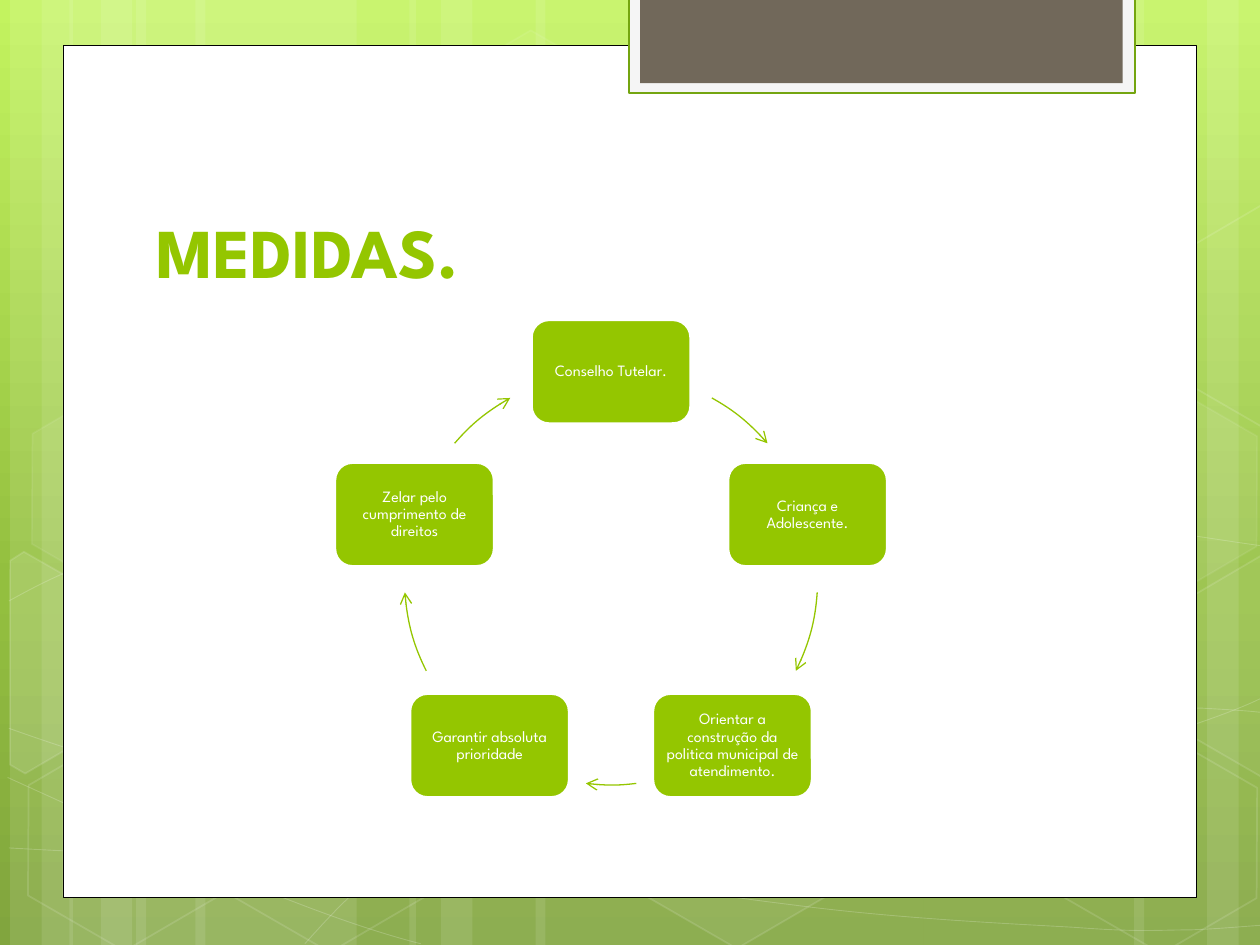
import math
from lxml import etree
from pptx import Presentation, util as u
from pptx.dml.color import RGBColor
from pptx.enum import shapes as sh, text as tx
from pptx.oxml.ns import qn

PX = 9144  # 100 px to the inch
FONT = "League Spartan"
WHITE = RGBColor(0xFF, 0xFF, 0xFF)
BLACK = RGBColor(0, 0, 0)
GREEN = RGBColor(0x94, 0xC6, 0x00)
EDGE = RGBColor(0x74, 0xA5, 0x10)
PALE = RGBColor(0xF5, 0xF5, 0xF5)
BROWN = RGBColor(0x71, 0x68, 0x5A)
SKY = ((0, "C3F35F"), (62, "93BF3F"), (100, "81A53E"))

deck = Presentation()
deck.slide_width, deck.slide_height = 1000 * PX, 750 * PX
slide = deck.slides.add_slide(deck.slide_layouts[5])
items = slide.shapes


def style(shape, fill=None, fade=100, line=None, dim=100, width=1):
    """Set fill and line, with opacities fade and dim in percent."""
    shape.shadow.inherit = False
    shape.line.width = u.Pt(width)
    props = shape._element.spPr
    for paint, root, color, alpha in ((shape.fill, props, fill, fade),
                                      (shape.line.fill, props.ln, line, dim)):
        if color is None:
            paint.background()
            continue
        paint.solid()
        paint.fore_color.rgb = color
        if alpha < 100:
            tone = root.find(qn("a:solidFill")).find(qn("a:srgbClr"))
            etree.SubElement(tone, qn("a:alpha"), val=str(alpha * 1000))
    return shape


def trace(points, box=None, turn=None):
    """Draw cubic curves through points, or a closed polygon if turned.

    The box is left, top, width, height before the turn in degrees;
    points are given as they lie on the slide.
    """
    if box is None:
        xs, ys = zip(*points)
        box = min(xs), min(ys), max(xs) - min(xs), max(ys) - min(ys)
    x, y, w, h = box
    pen = items.build_freeform(x * PX, y * PX, scale=1.0)
    pen.add_line_segments([((x + w) * PX, (y + h) * PX)], close=False)
    shape = pen.convert_to_shape()
    shape.rotation = turn or 0
    cos, sin = math.cos(math.radians(turn or 0)), math.sin(math.radians(turn or 0))
    path = shape._element.spPr.find(".//" + qn("a:path"))
    for old in list(path):
        path.remove(old)
    group = 1 if turn else 3
    for i, (px, py) in enumerate(points):
        if i == 0:
            step = etree.SubElement(path, qn("a:moveTo"))
        elif (i - 1) % group == 0:
            step = etree.SubElement(path, qn("a:lnTo" if turn else "a:cubicBezTo"))
        dx, dy = px - x - w / 2, py - y - h / 2
        etree.SubElement(step, qn("a:pt"), x=str(round((w / 2 + dx * cos + dy * sin) * PX)),
                         y=str(round((h / 2 - dx * sin + dy * cos) * PX)))
    if turn:
        etree.SubElement(path, qn("a:close"))
    return shape


# Background
back = slide.background.fill
back.gradient()
back.gradient_angle = 270
stops = slide._element.find(".//" + qn("a:gsLst"))
for stop in list(stops):
    stops.remove(stop)
for place, tone in SKY:
    stop = etree.SubElement(stops, qn("a:gs"), pos=str(place * 1000))
    etree.SubElement(stop, qn("a:srgbClr"), val=tone)

strips = ((108, 175), (8, 50), (33, 83), (155, 175), (55, 50), (80, 83),
          (733, 175), (958, 50), (900, 83), (425, 308), (325, 50), (350, 83))
for x, w in strips:
    strip = items.add_shape(sh.MSO_SHAPE.RECTANGLE, x * PX, 0, w * PX, 750 * PX)
    strip.rotation = 180 if x > 700 else 0
    style(strip, WHITE, 10)

# Each wave is a start point, then cubic steps of three points
waves = (
    ((7, 673), (61, 676), (115, 679), (190, 678), (265, 677), (358, 675), (458, 665),
     (558, 655), (700, 636), (792, 617), (883, 598), (977, 568), (1007, 551)),
    ((7, 477), (36, 461), (65, 446), (121, 431), (178, 416), (259, 394), (347, 387),
     (436, 380), (544, 379), (654, 387), (764, 395), (947, 426), (1007, 434)),
    ((6, 617), (127, 672), (247, 727), (334, 749)),
    ((7, 578), (38, 589), (70, 600), (128, 616), (186, 631), (273, 656), (357, 673),
     (440, 690), (545, 708), (628, 718), (711, 729), (800, 733), (853, 736),
     (905, 740), (919, 738), (945, 738), (971, 737), (989, 735), (1007, 734)),
    ((242, 749), (260, 729), (278, 709), (302, 691), (326, 673), (360, 653), (388, 639),
     (416, 625), (433, 619), (470, 609), (506, 599), (573, 585), (608, 578),
     (644, 571), (649, 571), (680, 569), (711, 566), (760, 563), (794, 562),
     (829, 561), (886, 562), (886, 562), (908, 562), (931, 562), (953, 562),
     (971, 563), (988, 564), (997, 565), (1006, 566), (1003, 565), (1006, 566)),
)
for wave in waves:
    style(trace(wave), line=WHITE, dim=20, width=0.5)

hexes = ((334, 36, 4, 8), (497, 589, 6, 12), (11, 591, 0, 12), (14, 312, 7, 8),
         (174, 592, 0, 12), (753, 453, 10, 12), (834, 593, 0, 12), (834, 314, 7, 8))
for x, y, fade, dim in hexes:
    cell = items.add_shape(sh.MSO_SHAPE.HEXAGON, x * PX, y * PX, 175 * PX, 152 * PX)
    cell.adjustments[0] = 0.285
    cell.rotation = 30
    style(cell, WHITE if fade else None, fade, WHITE, dim)

# Hexagons cut by the slide's edge
right = ((926, 485), (1001, 441), (1009, 446), (1009, 613), (1002, 617), (926, 573))
left = ((8, 445), (19, 438), (96, 482), (95, 570), (20, 614), (8, 607))
upper = [(x, y - 278) for x, y in right]
for points, box, fade in ((left, (-33, 459, 138, 152), 10),
                          (right, (917, 444, 136, 152), 4),
                          (upper, (917, 165, 136, 152), 0)):
    style(trace(points, box, 30), WHITE if fade else None, fade, WHITE, 12)

# Panel and tab
for box, fill, line, width in (
    ((50, 36, 900, 676), WHITE, BLACK, 0.5),
    ((499, -2, 402, 76), PALE, EDGE, 1.25),
    ((508, -2, 383, 68), BROWN, None, 1),
):
    card = items.add_shape(sh.MSO_SHAPE.RECTANGLE, *(v * PX for v in box))
    style(card, fill, line=line, width=width)

# Title
title = items.title
items._spTree.append(title._element)
for key, val in dict(left=114, top=112, width=768, height=125).items():
    setattr(title, key, val * PX)
frame = title.text_frame
frame.text = "MEDIDAS."
frame.auto_size = tx.MSO_AUTO_SIZE.NONE
frame.vertical_anchor = tx.MSO_ANCHOR.BOTTOM
frame.paragraphs[0].alignment = tx.PP_ALIGN.LEFT
font = frame.paragraphs[0].runs[0].font
for key, val in dict(name=FONT, size=u.Pt(40), bold=True).items():
    setattr(font, key, val)
font.color.rgb = GREEN

# Cycle: angles run clockwise from the top
MID_X, MID_Y, RADIUS = 485, 459, 164
WIDE, HIGH = 126, 82
ring = (MID_X - RADIUS, MID_Y - RADIUS, 2 * RADIUS, 2 * RADIUS)
steps = (
    ("Conselho Tutelar.", 29.2, 49.2),
    ("Criança e Adolescente.", 93.9, 116.6),
    ("Orientar a construção da politica municipal de atendimento.", 173, 187),
    ("Garantir absoluta prioridade", 243.4, 266.1),
    ("Zelar pelo cumprimento de direitos", 310.8, 330.8),
)
for i, (label, start, end) in enumerate(steps):
    bend = 4 / 3 * math.tan(math.radians(end - start) / 4)
    spots = []
    for deg, pull in ((72 * i, 0), (start, 0), (start, bend), (end, -bend), (end, 0)):
        sin, cos = math.sin(math.radians(deg)), math.cos(math.radians(deg))
        spots.append((MID_X + RADIUS * (sin + pull * cos),
                      MID_Y - RADIUS * (cos - pull * sin)))
    x, y = spots[0]
    node = items.add_shape(sh.MSO_SHAPE.ROUNDED_RECTANGLE, round((x - WIDE / 2) * PX),
                           round((y - HIGH / 2) * PX), WIDE * PX, HIGH * PX)
    style(node, GREEN, line=WHITE, width=1.25)
    frame = node.text_frame
    frame.text = label
    for side in ("left", "right", "top", "bottom"):
        setattr(frame, "margin_" + side, 4 * PX)
    frame.word_wrap = True
    frame.vertical_anchor = tx.MSO_ANCHOR.MIDDLE
    para = frame.paragraphs[0]
    para.alignment = tx.PP_ALIGN.CENTER
    para.line_spacing = 0.9
    font = para.runs[0].font
    font.name, font.size = FONT, u.Pt(9)
    font.color.rgb = WHITE

    arrow = style(trace(spots[1:], ring), line=GREEN, width=0.75)
    etree.SubElement(arrow._element.spPr.ln, qn("a:tailEnd"), type="arrow")

deck.save("out.pptx")
